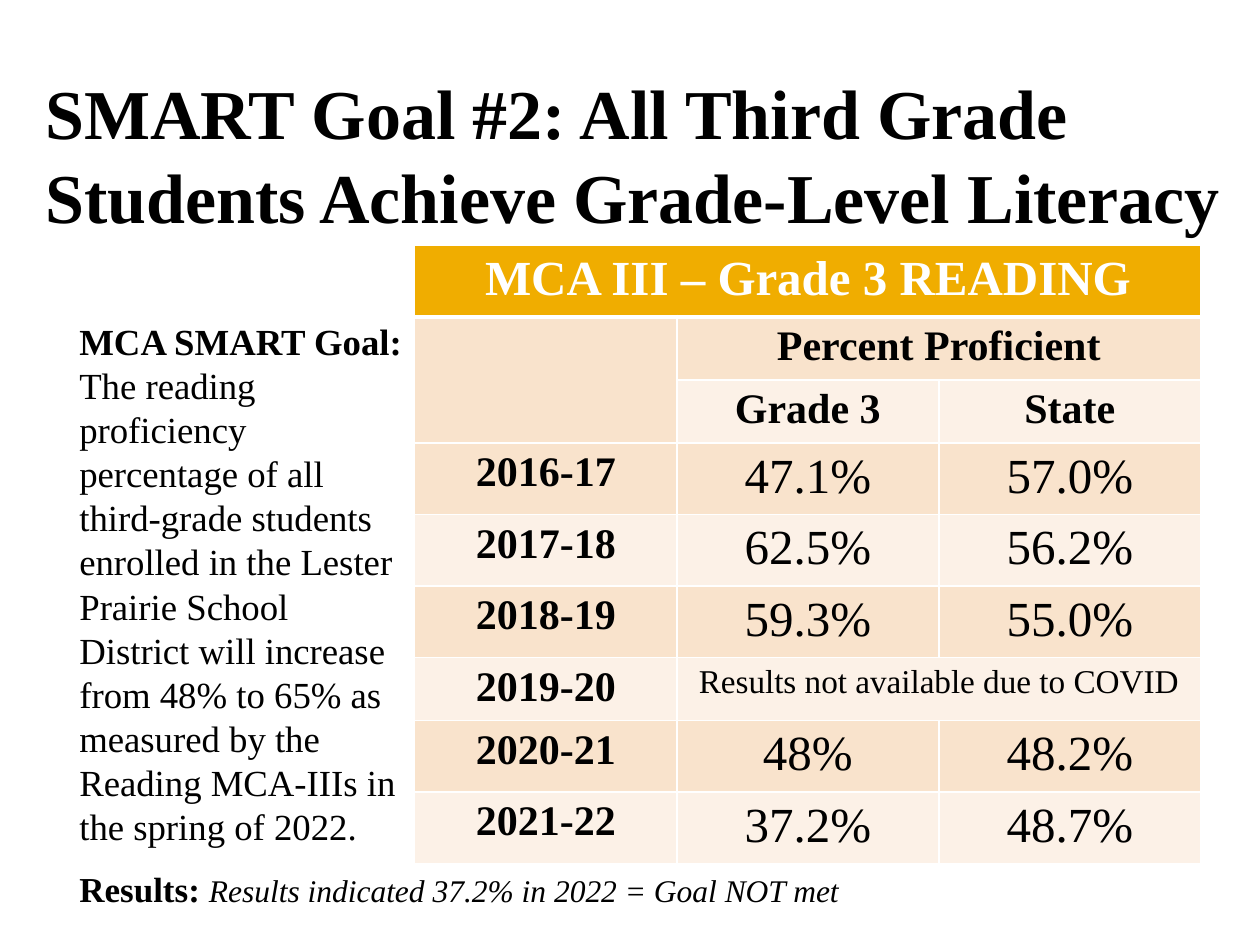
from dataclasses import dataclass

from lxml import etree
from pptx import Presentation
from pptx.dml.color import RGBColor
from pptx.enum import text
from pptx.oxml import ns
from pptx.util import Cm, Pt


@dataclass(frozen=True)
class Theme:
    font: str = "Times New Roman"
    ink: str = "000000"
    white: str = "FFFFFF"
    header: str = "F0AD00"
    bands: tuple = ("F9E3CC", "FCF1E7")
    title: int = 40
    goal: int = 21
    results: int = 20
    finding: int = 18
    value: int = 28
    label: int = 24
    note: int = 19
    rule: int = 1
    header_rule: int = 3


THEME = Theme()

TITLE = "SMART Goal #2: All Third Grade Students Achieve Grade-Level Literacy"
GOAL = (
    "MCA SMART Goal:",
    " The reading proficiency percentage of all third-grade students enrolled "
    "in the Lester Prairie School District will increase from 48% to 65% as "
    "measured by the Reading MCA-IIIs in the spring of 2022.",
)
RESULTS = ("Results: ", "Results indicated 37.2% in 2022 = Goal NOT met")

HEADER = "MCA III – Grade 3 READING"
GROUP = "Percent Proficient"
COLUMNS = ("Grade 3", "State")
YEARS = [
    ("2016-17", "47.1%", "57.0%"),
    ("2017-18", "62.5%", "56.2%"),
    ("2018-19", "59.3%", "55.0%"),
    ("2019-20", "Results not available due to COVID"),
    ("2020-21", "48%", "48.2%"),
    ("2021-22", "37.2%", "48.7%"),
]

# Left, top, width, height in centimetres
TITLE_AREA = (0.66, 1.19, 24.36, 3.81)
GOAL_AREA = (1.35, 6.3, 7.01, 10.13)
RESULTS_AREA = (1.35, 17.37, 17.93, 1.96)
TABLE_AREA = (8.36, 4.95, 15.85, 12.4)
TALL_ROW, SHORT_ROW = 1.43, 1.27


def add_span(para, words, size, bold=False, italic=False, color=THEME.ink):
    span = para.add_run()
    span.text = words
    font = span.font
    font.name, font.size = THEME.font, Pt(size)
    font.bold, font.italic = bold, italic
    font.color.rgb = RGBColor.from_string(color)


def add_box(page, area):
    """Add a wrapping text box and return its first paragraph."""
    box = page.shapes.add_textbox(*map(Cm, area))
    box.text_frame.word_wrap = True
    return box.text_frame.paragraphs[0]


def fill_title(page):
    box = page.shapes.title
    box.left, box.top, box.width, box.height = map(Cm, TITLE_AREA)
    frame = box.text_frame
    frame.auto_size = text.MSO_AUTO_SIZE.NONE
    frame.vertical_anchor = text.MSO_ANCHOR.MIDDLE
    para = frame.paragraphs[0]
    para.alignment = text.PP_ALIGN.LEFT
    add_span(para, TITLE, THEME.title, bold=True)


def set_borders(cell, **widths):
    """Draw white cell edges; widths in points are keyed by lnL, lnR, lnT, lnB."""
    properties = cell._tc.get_or_add_tcPr()
    for index, (edge, width) in enumerate(widths.items()):
        line = etree.Element(ns.qn(f"a:{edge}"), w=str(Pt(width)))
        fill = etree.SubElement(line, ns.qn("a:solidFill"))
        etree.SubElement(fill, ns.qn("a:srgbClr"), val=THEME.white)
        properties.insert(index, line)


def write_cell(cell, words, size, **style):
    para = cell.text_frame.paragraphs[0]
    para.alignment = text.PP_ALIGN.CENTER
    add_span(para, words, size, **style)


def style_grid(table):
    for r, row in enumerate(table.rows):
        color = THEME.bands[(r - 1) % 2] if r else THEME.header
        top = THEME.header_rule if r == 1 else THEME.rule
        bottom = THEME.header_rule if r == 0 else THEME.rule
        for cell in row.cells:
            cell.fill.solid()
            cell.fill.fore_color.rgb = RGBColor.from_string(color)
            set_borders(cell, lnL=THEME.rule, lnR=THEME.rule, lnT=top, lnB=bottom)


def add_scores(page):
    rows, columns = len(YEARS) + 3, len(COLUMNS) + 1
    table = page.shapes.add_table(rows, columns, *map(Cm, TABLE_AREA)).table
    table.horz_banding = False
    for column in table.columns:
        column.width = Cm(TABLE_AREA[2] / columns)
    for row in table.rows:
        row.height = Cm(TALL_ROW)
    style_grid(table)

    table.cell(0, 0).merge(table.cell(0, columns - 1))
    table.cell(1, 0).merge(table.cell(2, 0))
    table.cell(1, 1).merge(table.cell(1, columns - 1))
    write_cell(table.cell(0, 0), HEADER, THEME.value, bold=True, color=THEME.white)
    write_cell(table.cell(1, 1), GROUP, THEME.label, bold=True)
    for c, name in enumerate(COLUMNS, 1):
        write_cell(table.cell(2, c), name, THEME.label, bold=True)
    for r in (1, 2):
        table.rows[r].height = Cm(SHORT_ROW)

    for r, (year, *values) in enumerate(YEARS, 3):
        write_cell(table.cell(r, 0), year, THEME.label, bold=True)
        is_note = len(values) < len(COLUMNS)
        if is_note:
            table.cell(r, 1).merge(table.cell(r, columns - 1))
            table.rows[r].height = Cm(SHORT_ROW)
        for c, value in enumerate(values, 1):
            write_cell(table.cell(r, c), value, THEME.note if is_note else THEME.value)


def main():
    deck = Presentation()
    deck.slide_width, deck.slide_height = Cm(25.4), Cm(19.05)
    page = deck.slides.add_slide(deck.slide_layouts.get_by_name("Title Only"))
    fill_title(page)

    goal = add_box(page, GOAL_AREA)
    add_span(goal, GOAL[0], THEME.goal, bold=True)
    add_span(goal, GOAL[1], THEME.goal)

    add_scores(page)

    results = add_box(page, RESULTS_AREA)
    add_span(results, RESULTS[0], THEME.results, bold=True)
    add_span(results, RESULTS[1], THEME.finding, italic=True)
    deck.save("out.pptx")


if __name__ == "__main__":
    main()
